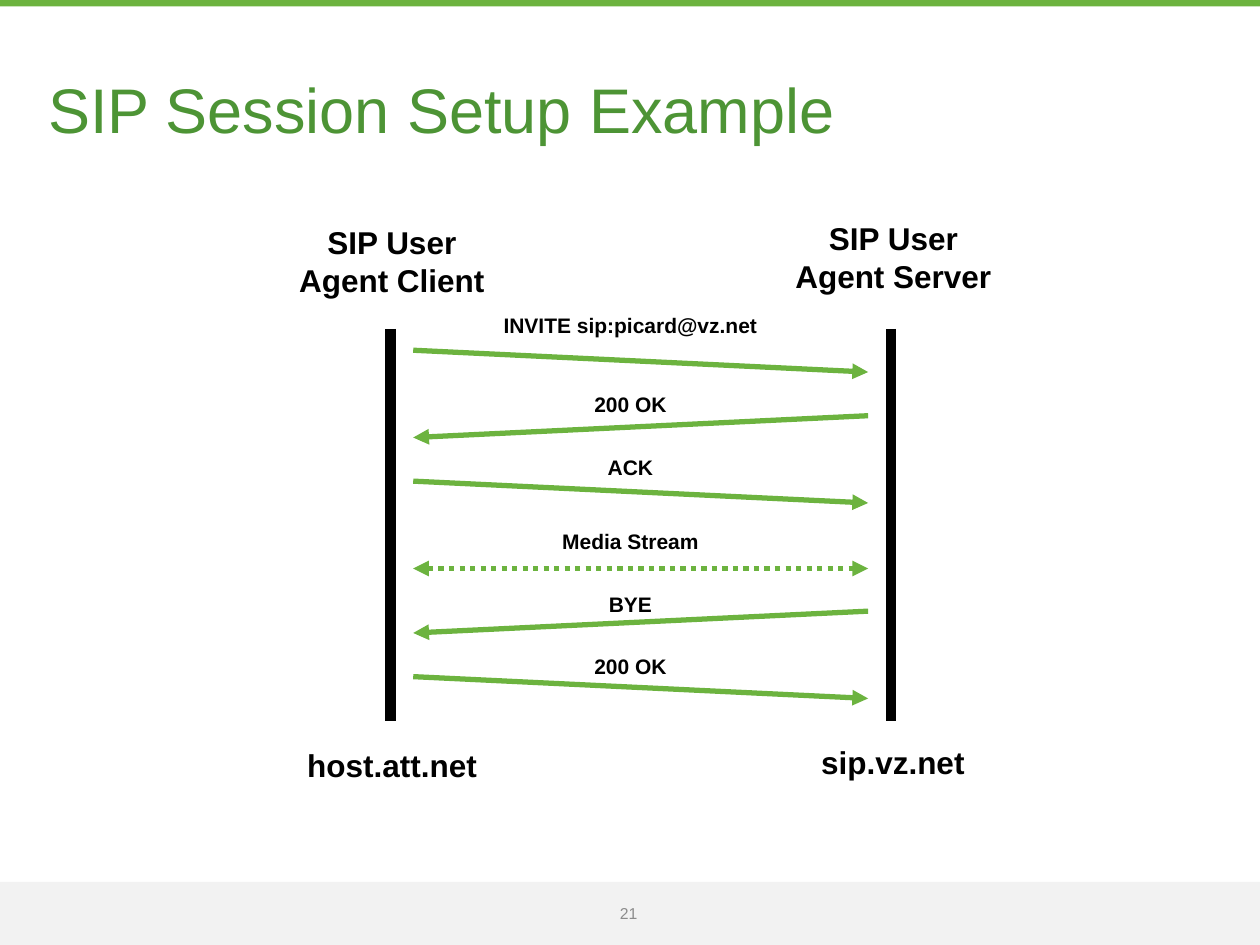
import pptx
import pptx.dml.color
import pptx.enum.dml
import pptx.enum.shapes
import pptx.enum.text
import pptx.oxml.ns
import pptx.util
from lxml import etree

Cm = pptx.util.Cm
Pt = pptx.util.Pt
RGB = pptx.dml.color.RGBColor
ALIGN = pptx.enum.text.PP_ALIGN
MID = pptx.enum.text.MSO_ANCHOR.MIDDLE
qn = pptx.oxml.ns.qn

GREEN = RGB(0x6C, 0xB3, 0x3F)
DARK = RGB(0x4D, 0x94, 0x35)
BLACK = RGB(0, 0, 0)
GREY = RGB(0x8C, 0x8C, 0x8C)
PALE = RGB(0xF2, 0xF2, 0xF2)

WIDE, HIGH = 25.4, 19.05
LEFT, RIGHT = 8.33, 17.5    # arrow ends
DROP = 0.44                 # fall of a message on its way
MID_X = 12.71               # centre of the message labels

# Label, its top, width and height, arrow top, direction
CALLS = [
    ("INVITE sip:picard@vz.net", 6.17, 8.26, 1.32, 7.06, "right"),
    ("200 OK", 7.77, 8.26, 1.32, 8.38, "left"),
    ("ACK", 9.04, 8.26, 1.32, 9.7, "right"),
    ("Media Stream", 10.54, 5.05, 1.09, 11.46, "both"),
    ("BYE", 11.81, 5.05, 1.09, 12.32, "left"),
    ("200 OK", 13.06, 5.97, 1.09, 13.64, "right"),
]

# Names of the two parties: paragraphs and box
NAMES = [
    (["SIP User", "Agent Client"], (5.18, 4.37, 5.44, 2.11)),
    (["SIP User Agent Server"], (15.75, 4.29, 4.52, 2.16)),
    (["host.att.net"], (5.11, 14.91, 5.59, 1.75)),
    (["sip.vz.net"], (15.7, 14.86, 4.6, 1.75)),
]


def add_run(para, text, size, color, bold=False):
    run = para.add_run()
    run.text = text
    font = run.font
    font.name = "Arial"
    font.size = Pt(size)
    font.bold = bold
    font.color.rgb = color


def add_band(slide, top, high, color):
    band = slide.shapes.add_shape(
        pptx.enum.shapes.MSO_SHAPE.RECTANGLE,
        0, Cm(top), Cm(WIDE), Cm(high))
    band.shadow.inherit = False
    band.fill.solid()
    band.fill.fore_color.rgb = color
    band.line.fill.background()


def add_label(slide, lines, box, size, color=BLACK, bold=True):
    shape = slide.shapes.add_textbox(*map(Cm, box))
    frame = shape.text_frame
    frame.word_wrap = True
    for i, text in enumerate(lines):
        para = frame.add_paragraph() if i else frame.paragraphs[0]
        para.alignment = ALIGN.CENTER
        add_run(para, text, size, color, bold)
    return frame


def add_line(slide, start, end, color, width):
    line = slide.shapes.add_connector(
        pptx.enum.shapes.MSO_CONNECTOR.STRAIGHT,
        *map(Cm, start + end))
    line.line.color.rgb = color
    line.line.width = Pt(width)
    etree.SubElement(line._element.spPr, qn("a:effectLst"))
    return line


def add_arrow(slide, top, way):
    low = top if way == "both" else top + DROP
    start, end = (LEFT, top), (RIGHT, low)
    if way == "left":
        start, end = (RIGHT, top), (LEFT, low)
    arrow = add_line(slide, start, end, GREEN, 3)
    tips = ["tailEnd"]
    if way == "both":
        arrow.line.dash_style = pptx.enum.dml.MSO_LINE.ROUND_DOT
        tips = ["headEnd", "tailEnd"]
    edge = arrow._element.spPr.find(qn("a:ln"))
    for tip in tips:
        etree.SubElement(edge, qn("a:" + tip), type="triangle")


def set_title(slide, text):
    title = slide.shapes.title
    title.left, title.top = Cm(0.97), Cm(0.76)
    title.width, title.height = Cm(23.5), Cm(3.18)
    frame = title.text_frame
    frame.auto_size = pptx.enum.text.MSO_AUTO_SIZE.NONE
    frame.vertical_anchor = MID
    frame.margin_left = frame.margin_right = frame.margin_top = 0
    frame.margin_bottom = Cm(0.13)
    para = frame.paragraphs[0]
    para.alignment = ALIGN.LEFT
    para.line_spacing = 0.9
    add_run(para, text, 36, DARK)


def add_page(slide, text):
    box = (12.14, 18.03, 1.07, 0.76)
    frame = add_label(slide, [text], box, 9, GREY, False)
    frame.vertical_anchor = MID
    frame.margin_left = frame.margin_right = 0
    frame.margin_top = frame.margin_bottom = 0


def main():
    deck = pptx.Presentation()
    deck.slide_width, deck.slide_height = Cm(WIDE), Cm(HIGH)
    slide = deck.slides.add_slide(deck.slide_layouts[5])

    # Frame of the page
    add_band(slide, 17.78, 1.27, PALE)
    add_band(slide, 0, 0.13, GREEN)
    set_title(slide, "SIP Session Setup Example")
    add_page(slide, "21")

    # Client and server
    for x in (7.87, 17.96):
        add_line(slide, (x, 6.63), (x, 14.53), BLACK, 6)
    for lines, box in NAMES:
        add_label(slide, lines, box, 18)

    # Messages between them
    for text, top, wide, high, y, way in CALLS:
        add_arrow(slide, y, way)
        add_label(slide, [text], (MID_X - wide / 2, top, wide, high), 12)

    deck.save("out.pptx")


if __name__ == "__main__":
    main()
